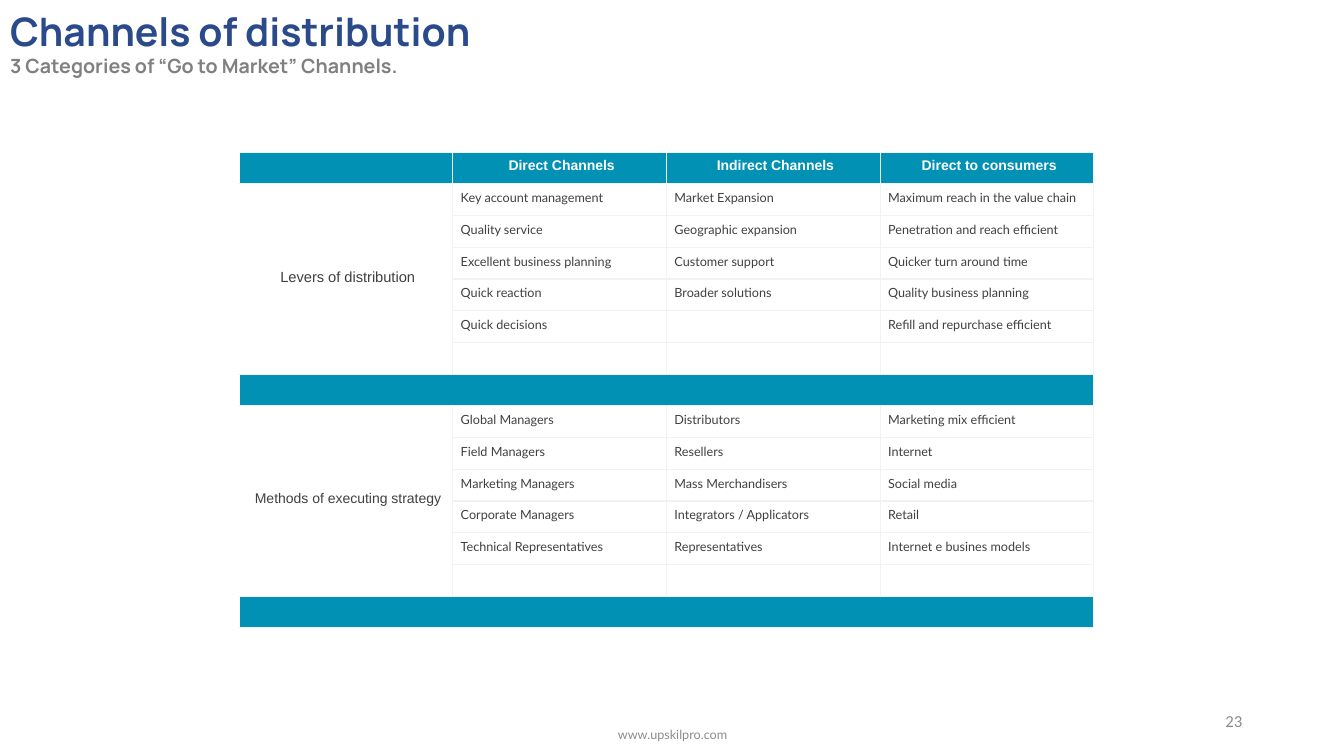
from lxml import etree
from pptx import Presentation
from pptx.dml.color import RGBColor
from pptx.enum.text import MSO_ANCHOR, MSO_AUTO_SIZE, PP_ALIGN
from pptx.oxml.ns import qn
from pptx.util import Inches, Pt

LEFT, CENTER, RIGHT = PP_ALIGN.LEFT, PP_ALIGN.CENTER, PP_ALIGN.RIGHT
TOP, MIDDLE = MSO_ANCHOR.TOP, MSO_ANCHOR.MIDDLE
NO_AUTOFIT = MSO_AUTO_SIZE.NONE
TITLE_ONLY = 5

TEAL, WHITE, DARK, GRAY = "0091B5", "FFFFFF", "404040", "8C8C8C"
NAVY, SUBTITLE_GRAY, BORDER = "2A4A8B", "808080", "F2F2F2"

HEADINGS = ["", "Direct Channels ", "Indirect Channels ", "Direct to consumers "]
# Each section: label, label size, fill of its cells, rows of the three channels
SECTIONS = [
    ("Levers of distribution ", 10.5, WHITE, [
        ("Key account management", "Market Expansion", "Maximum reach in the value chain"),
        ("Quality service", "Geographic expansion", "Penetration and reach efficient"),
        ("Excellent business planning", "Customer support", "Quicker turn around time"),
        ("Quick reaction", "Broader solutions", "Quality business planning"),
        ("Quick decisions", "", "Refill and repurchase efficient"),
        ("", "", ""),
    ]),
    ("Methods of executing strategy ", 10, None, [
        ("Global Managers", "Distributors", "Marketing mix efficient"),
        ("Field Managers", "Resellers", "Internet"),
        ("Marketing Managers", "Mass Merchandisers", "Social media"),
        ("Corporate Managers", "Integrators / Applicators", "Retail"),
        ("Technical Representatives", "Representatives", "Internet e busines models"),
        ("", "", ""),
    ]),
]


def rgb(color):
    return RGBColor.from_string(color)


def format_paragraph(paragraph, font, size, color, bold=False, align=LEFT):
    paragraph.alignment = align
    for run in paragraph.runs:
        run.font.name = font
        run.font.size = Pt(size)
        run.font.bold = bold
        run.font.color.rgb = rgb(color)
    if not paragraph.runs:
        # An empty cell needs its own text size to keep the row height
        etree.SubElement(paragraph._p, qn("a:endParaRPr"), sz=str(int(size * 100)))


def add_borders(cell, sides):
    properties = cell._tc.get_or_add_tcPr()
    for side in sides:
        line = etree.SubElement(properties, qn(f"a:ln{side}"), w=str(Pt(1)))
        fill = etree.SubElement(line, qn("a:solidFill"))
        etree.SubElement(fill, qn("a:srgbClr"), val=BORDER)


def set_cell(cell, text="", fill=None, font="Lato", size=9, color=DARK,
             bold=False, align=LEFT, sides="LRTB"):
    add_borders(cell, sides)
    if fill:
        cell.fill.solid()
        cell.fill.fore_color.rgb = rgb(fill)
    else:
        cell.fill.background()
    cell.margin_left, cell.margin_right = Inches(0.08), 0
    cell.margin_top, cell.margin_bottom = 0, Inches(0.04)
    cell.vertical_anchor = MIDDLE
    cell.text_frame.text = text
    format_paragraph(cell.text_frame.paragraphs[0], font, size, color, bold, align)


def add_title(slide, title, subtitle):
    shape = slide.shapes.title
    shape.left, shape.top = 0, Inches(0.02)
    shape.width, shape.height = Inches(5.26), Inches(0.81)
    frame = shape.text_frame
    frame.text = title
    frame.word_wrap = True
    frame.auto_size = NO_AUTOFIT
    frame.vertical_anchor = TOP
    format_paragraph(frame.paragraphs[0], "Manrope", 28, NAVY, True)
    paragraph = frame.add_paragraph()
    paragraph.text = subtitle
    format_paragraph(paragraph, "Manrope", 14, SUBTITLE_GRAY, True)


def add_label(slide, text, left, top, width, font, size, align):
    box = slide.shapes.add_textbox(Inches(left), Inches(top), Inches(width), Inches(0.4))
    frame = box.text_frame
    frame.text = text
    frame.word_wrap = True
    frame.vertical_anchor = MIDDLE
    format_paragraph(frame.paragraphs[0], font, size, GRAY, align=align)


def add_channel_table(slide):
    columns = len(HEADINGS)
    row_count = 1 + sum(len(rows) + 1 for _, _, _, rows in SECTIONS)
    frame = slide.shapes.add_table(row_count, columns, Inches(2.37), Inches(1.51),
                                   Inches(8.48), Inches(4.72))
    table = frame.table
    table.first_row = table.horz_banding = False

    # Heading row
    for column, heading in enumerate(HEADINGS):
        set_cell(table.cell(0, column), heading, TEAL, "Arial", 10, WHITE, True, CENTER,
                 "LRTB" if column else "RTB")

    # Sections, each closed by a coloured band
    first = 1
    for label, label_size, fill, rows in SECTIONS:
        band = first + len(rows)
        for row, texts in enumerate(rows, first):
            set_cell(table.cell(row, 0), label if row == first else "", None,
                     "Arial", label_size, align=CENTER, sides="RTB")
            for column, text in enumerate(texts, 1):
                set_cell(table.cell(row, column), text, fill)
        for column in range(columns):
            set_cell(table.cell(band, column), fill=TEAL, sides="RTB")
        table.cell(first, 0).merge(table.cell(band - 1, 0))
        table.cell(band, 0).merge(table.cell(band, columns - 1))
        first = band + 1


def main():
    presentation = Presentation()
    presentation.slide_width = Inches(13.33)
    presentation.slide_height = Inches(7.5)
    slide = presentation.slides.add_slide(presentation.slide_layouts[TITLE_ONLY])

    add_channel_table(slide)
    add_title(slide, "Channels of distribution", "3 Categories of “Go to Market” Channels.")

    # Page number and web address
    add_label(slide, "23", 9.42, 6.95, 3, "Calibri", 12, RIGHT)
    add_label(slide, "www.upskilpro.com", 4.42, 7.09, 4.5, "Lato", 9, CENTER)

    presentation.save("out.pptx")


if __name__ == "__main__":
    main()
